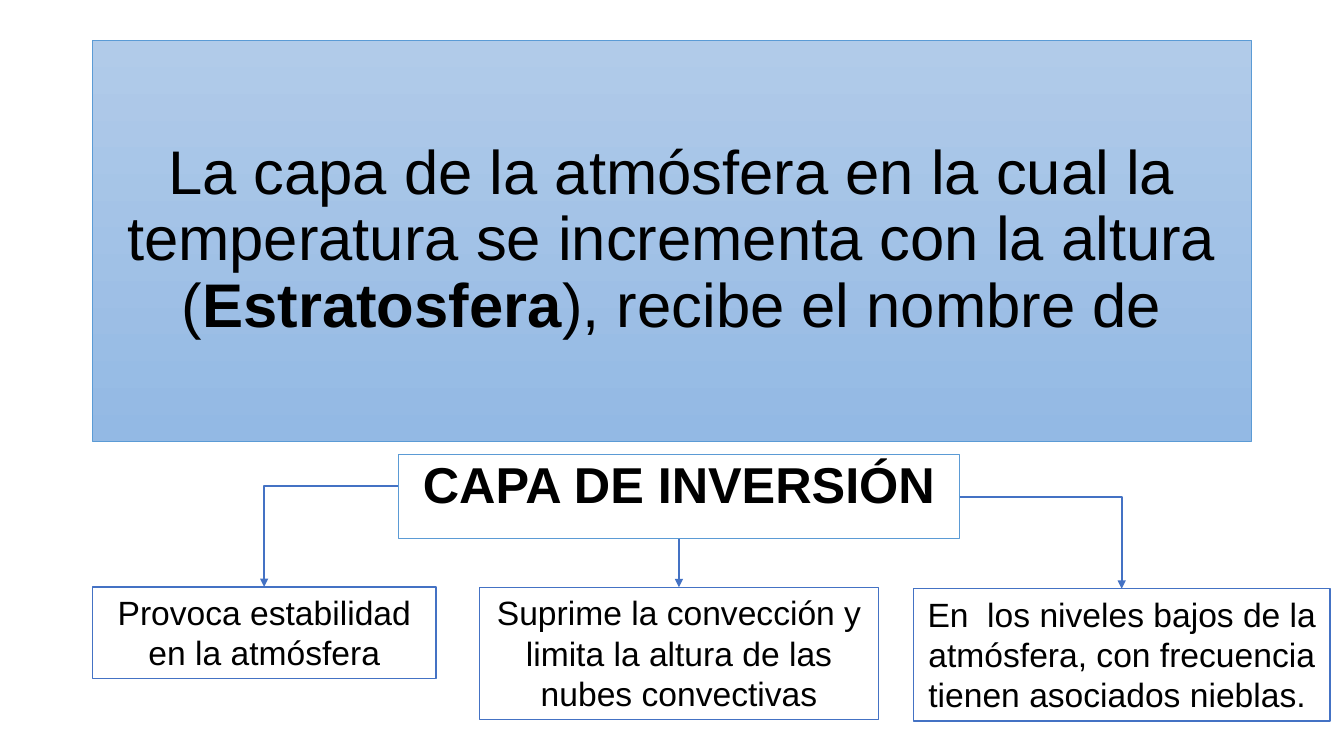
from lxml.etree import SubElement
from pptx import Presentation
from pptx.dml.color import RGBColor
from pptx.enum.shapes import MSO_CONNECTOR as Connector, MSO_SHAPE as Shape
from pptx.enum.text import MSO_ANCHOR as Anchor, PP_ALIGN as Align
from pptx.oxml.ns import qn
from pptx.util import Pt

BLACK = RGBColor(0x00, 0x00, 0x00)
WHITE = RGBColor(0xFF, 0xFF, 0xFF)
SKY = RGBColor(0x5B, 0x9B, 0xD5)
BLUE = RGBColor(0x44, 0x72, 0xC4)
GRADIENT = (RGBColor(0xB1, 0xCB, 0xE9), RGBColor(0x93, 0xB9, 0xE4))


class Diagram:
    font_name = "Arial"

    def __init__(self, slide):
        self.slide = slide

    def style_paragraph(self, paragraph, size, bold=None, line_spacing=None):
        paragraph.alignment = Align.CENTER
        paragraph.line_spacing = line_spacing
        font = paragraph.font
        font.name, font.size, font.bold = self.font_name, Pt(size), bold
        font.color.rgb = BLACK

    def title(self, runs, left, top, width, height):
        shape = self.slide.shapes.title
        shape.left, shape.top = Pt(left), Pt(top)
        shape.width, shape.height = Pt(width), Pt(height)
        shape.fill.gradient()
        shape.fill.gradient_angle = 270
        for stop, color in zip(shape.fill.gradient_stops, GRADIENT):
            stop.color.rgb = color
        shape.line.color.rgb = SKY
        shape.line.width = Pt(0.5)
        frame = shape.text_frame
        frame.word_wrap = True
        frame.vertical_anchor = Anchor.MIDDLE
        paragraph = frame.paragraphs[0]
        self.style_paragraph(paragraph, 44, line_spacing=0.9)
        for text, bold in runs:
            run = paragraph.add_run()
            run.text = text
            run.font.bold = bold

    def box(self, text, left, top, width, height, line_color=BLUE,
            size=24, bold=False, line_spacing=None):
        shape = self.slide.shapes.add_shape(
            Shape.RECTANGLE, Pt(left), Pt(top), Pt(width), Pt(height))
        shape.shadow.inherit = False
        shape.fill.solid()
        shape.fill.fore_color.rgb = WHITE
        shape.line.color.rgb = line_color
        shape.line.width = Pt(1)
        frame = shape.text_frame
        frame.word_wrap = True
        frame.vertical_anchor = Anchor.TOP
        frame.text = text
        self.style_paragraph(frame.paragraphs[0], size, bold, line_spacing)

    def arrow(self, start, end):
        """Draw an arrow that runs sideways first, then down, to its end."""
        bent = start[0] != end[0]
        kind = Connector.ELBOW if bent else Connector.STRAIGHT
        connector = self.slide.shapes.add_connector(
            kind, *(Pt(value) for value in (*start, *end)))
        connector.line.color.rgb = BLUE
        connector.line.width = Pt(1.5)
        properties = connector._element.spPr
        if bent:
            properties.find(qn("a:prstGeom")).set("prst", "bentConnector2")
        SubElement(properties.find(qn("a:ln")), qn("a:tailEnd"), type="triangle")
        SubElement(properties, qn("a:effectLst"))


def main():
    presentation = Presentation()
    presentation.slide_width, presentation.slide_height = Pt(960), Pt(540)
    slide = presentation.slides.add_slide(presentation.slide_layouts[5])
    diagram = Diagram(slide)

    diagram.title(
        [("La capa de la atmósfera en la cual la temperatura se incrementa "
          "con la altura (", False),
         ("Estratosfera", True),
         ("), recibe el nombre de", False)],
        66, 28.8, 828, 286.5)
    diagram.box("CAPA DE INVERSIÓN", 284.5, 324.7, 401, 60,
                line_color=SKY, size=36, bold=True, line_spacing=0.9)

    effects = [
        ("Provoca estabilidad en la atmósfera",
         (66, 419.2, 245.5, 65.5), (284.5, 347)),
        ("Suprime la convección y limita la altura de las nubes convectivas",
         (342.5, 419.5, 285, 94.5), (485, 384.7)),
        ("En  los niveles bajos de la atmósfera, con frecuencia tienen "
         "asociados nieblas. ",
         (652.5, 420.5, 297.5, 94.5), (685.5, 355)),
    ]
    for text, (left, top, width, height), start in effects:
        diagram.box(text, left, top, width, height)
        diagram.arrow(start, (left + width / 2, top))

    presentation.save("out.pptx")


if __name__ == "__main__":
    main()
